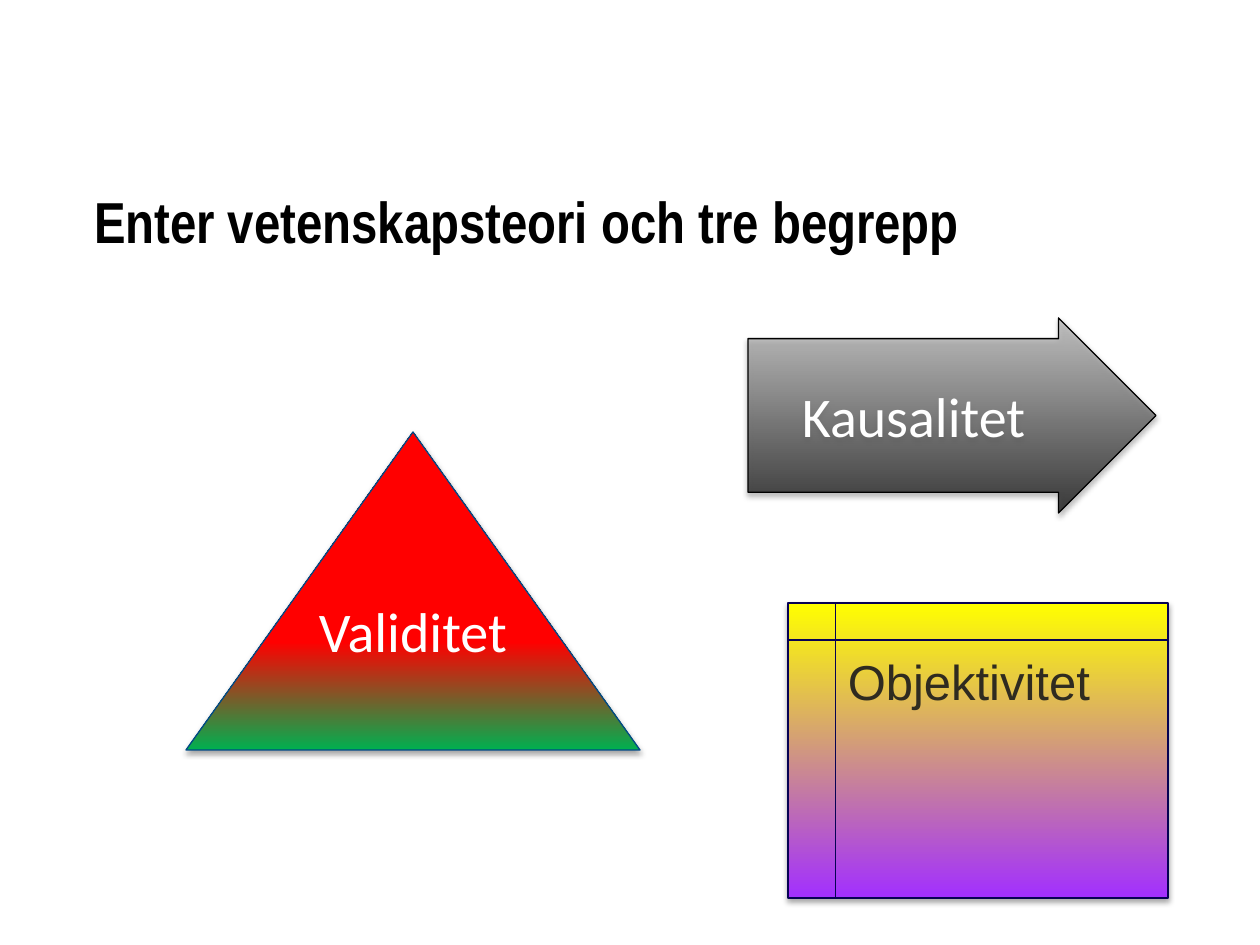
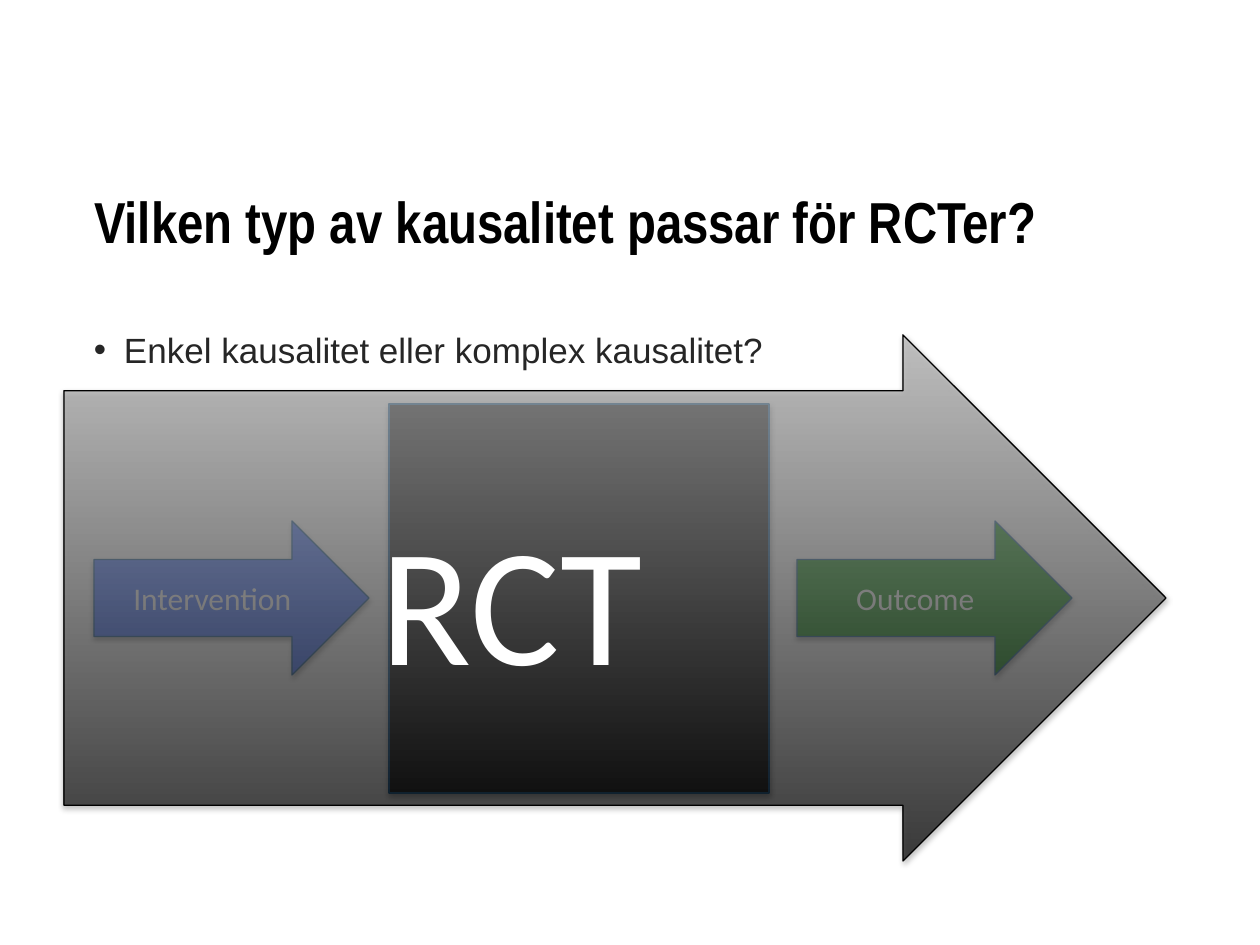
from dataclasses import dataclass

from lxml.etree import SubElement
from pptx import Presentation
from pptx.dml.color import RGBColor
from pptx.enum.shapes import MSO_SHAPE as Preset
from pptx.enum.text import MSO_ANCHOR as Anchor, PP_ALIGN as Align
from pptx.oxml.ns import qn
from pptx.slide import Slide
from pptx.text.text import TextFrame
from pptx.util import Pt

# Scale and palette
EMU_PER_INCH = 914400
PX_PER_INCH = 126
BLACK = RGBColor(0x00, 0x00, 0x00)
WHITE = RGBColor(0xFF, 0xFF, 0xFF)
SILVER = RGBColor(0xBD, 0xBD, 0xBD)
CHARCOAL = RGBColor(0x26, 0x26, 0x26)
BROWN = RGBColor(0x2F, 0x2B, 0x20)
RED = RGBColor(0xFF, 0x00, 0x00)
GREEN = RGBColor(0x00, 0xB0, 0x50)
DARK_GREEN = RGBColor(0x00, 0x80, 0x00)
BLUE = RGBColor(0x33, 0x66, 0xFF)
STEEL = RGBColor(0x00, 0x49, 0x86)
NAVY = RGBColor(0x07, 0x02, 0x54)
PURPLE = RGBColor(0xA2, 0x2F, 0xFF)
YELLOW = RGBColor(0xFF, 0xFF, 0x00)

Box = tuple[int, int, int, int]
TITLE_BOX: Box = (94, 194, 1091, 110)
BULLET_BOX: Box = (94, 324, 1032, 525)
BULLET_INDENT = 30


@dataclass(frozen=True)
class Style:
    font: str
    size: int
    color: RGBColor
    bold: bool = False


@dataclass(frozen=True)
class Gradient:
    """Colours from the bottom up; end is where the upper colour is reached."""
    bottom: RGBColor
    top: RGBColor
    end: float = 1.0
    opacity: int = 100


@dataclass(frozen=True)
class Figure:
    preset: Preset
    box: Box
    fill: RGBColor | Gradient
    line: RGBColor = STEEL
    label: str = ""
    style: Style = Style("Calibri", 32, WHITE)
    align: Align = Align.CENTER
    anchor: Anchor = Anchor.TOP
    top_inset: int = 6


TITLE_STYLE = Style("Arial Narrow", 33, BLACK, bold=True)
BULLET_STYLE = Style("Arial", 20, CHARCOAL)
SMOKE = Gradient(BLACK, SILVER, opacity=70)
WIDE_SHAFT = 0.788


def px(length: int) -> int:
    return round(length * EMU_PER_INCH / PX_PER_INCH)


def place(box: Box) -> list[int]:
    return [px(length) for length in box]


def write(frame: TextFrame, text: str, style: Style) -> None:
    span = frame.paragraphs[0].add_run()
    span.text = text
    span.font.name = style.font
    span.font.size = Pt(style.size)
    span.font.bold = style.bold
    span.font.color.rgb = style.color


def add_text(page: Slide, box: Box, text: str, style: Style,
             spacing: float, bullet: bool = False) -> None:
    frame = page.shapes.add_textbox(*place(box)).text_frame
    frame.word_wrap = True
    frame.margin_left = frame.margin_right = 0
    frame.margin_top = frame.margin_bottom = 0
    para = frame.paragraphs[0]
    para.line_spacing = spacing
    if bullet:
        props = para._p.get_or_add_pPr()
        props.set("marL", str(px(BULLET_INDENT)))
        props.set("indent", str(-px(BULLET_INDENT)))
        SubElement(props, qn("a:buFont"), typeface="Arial")
        SubElement(props, qn("a:buChar"), char="•")
    write(frame, text, style)


def paint(shape, fill: RGBColor | Gradient) -> None:
    if isinstance(fill, RGBColor):
        shape.fill.solid()
        shape.fill.fore_color.rgb = fill
        return
    shape.fill.gradient()
    shape.fill.gradient_angle = 90
    lower, upper = shape.fill.gradient_stops
    lower.color.rgb, lower.position = fill.bottom, 0
    upper.color.rgb, upper.position = fill.top, fill.end
    if fill.opacity < 100:
        for color in shape._element.spPr.iter(qn("a:srgbClr")):
            SubElement(color, qn("a:alpha"), val=str(fill.opacity * 1000))


def cast_shadow(shape) -> None:
    shape.shadow.inherit = False
    effects = shape._element.spPr.find(qn("a:effectLst"))
    shadow = SubElement(effects, qn("a:outerShdw"), blurRad="40000",
                        dist="23000", dir="5400000", rotWithShape="0")
    color = SubElement(shadow, qn("a:srgbClr"), val=str(BLACK))
    SubElement(color, qn("a:alpha"), val="35000")


def add_figure(page: Slide, figure: Figure) -> None:
    shape = page.shapes.add_shape(figure.preset, *place(figure.box))
    if figure.fill is SMOKE:
        shape.adjustments[0] = WIDE_SHAFT
    paint(shape, figure.fill)
    shape.line.color.rgb = figure.line
    shape.line.width = Pt(0.75)
    cast_shadow(shape)
    if figure.label:
        frame = shape.text_frame
        frame.word_wrap = True
        frame.vertical_anchor = figure.anchor
        frame.margin_top = px(figure.top_inset)
        frame.paragraphs[0].alignment = figure.align
        write(frame, figure.label, figure.style)


def arrow(label: str, box: Box, fill: RGBColor | Gradient, size: int,
          line: RGBColor = STEEL) -> Figure:
    return Figure(Preset.RIGHT_ARROW, box, fill, line, label,
                  Style("Calibri", size, WHITE), anchor=Anchor.MIDDLE)


# Slide 1: three concepts
CONCEPTS = [
    arrow("Kausalitet", (748, 318, 408, 195), SMOKE, 32, BLACK),
    Figure(Preset.FLOWCHART_INTERNAL_STORAGE, (788, 603, 380, 295),
           Gradient(PURPLE, YELLOW), NAVY, "Objektivitet",
           Style("Arial", 28, BROWN), Align.LEFT, top_inset=12),
    Figure(Preset.ISOSCELES_TRIANGLE, (186, 432, 454, 318),
           Gradient(GREEN, RED, end=0.34), label="Validitet"),
]

# Slide 2: from intervention to outcome, under the large arrow
RCT_MODEL = [
    arrow("Intervention", (94, 521, 275, 154), BLUE, 18),
    arrow("Outcome", (797, 521, 275, 154), DARK_GREEN, 18),
    Figure(Preset.RECTANGLE, (389, 404, 380, 389), BLACK),
    arrow("RCT", (64, 335, 1102, 526), SMOKE, 96, BLACK),
]


def add_page(deck, title: str, figures: list[Figure], bullet: str = "") -> None:
    page = deck.slides.add_slide(deck.slide_layouts[6])
    add_text(page, TITLE_BOX, title, TITLE_STYLE, 0.9)
    if bullet:
        add_text(page, BULLET_BOX, bullet, BULLET_STYLE, 1.1, bullet=True)
    for figure in figures:
        add_figure(page, figure)


def main() -> None:
    deck = Presentation()
    deck.slide_width, deck.slide_height = px(1260), px(945)
    add_page(deck, "Enter vetenskapsteori och tre begrepp", CONCEPTS)
    add_page(deck, "Vilken typ av kausalitet passar för RCTer?", RCT_MODEL,
             "Enkel kausalitet eller komplex kausalitet?")
    deck.save("out.pptx")


if __name__ == "__main__":
    main()
